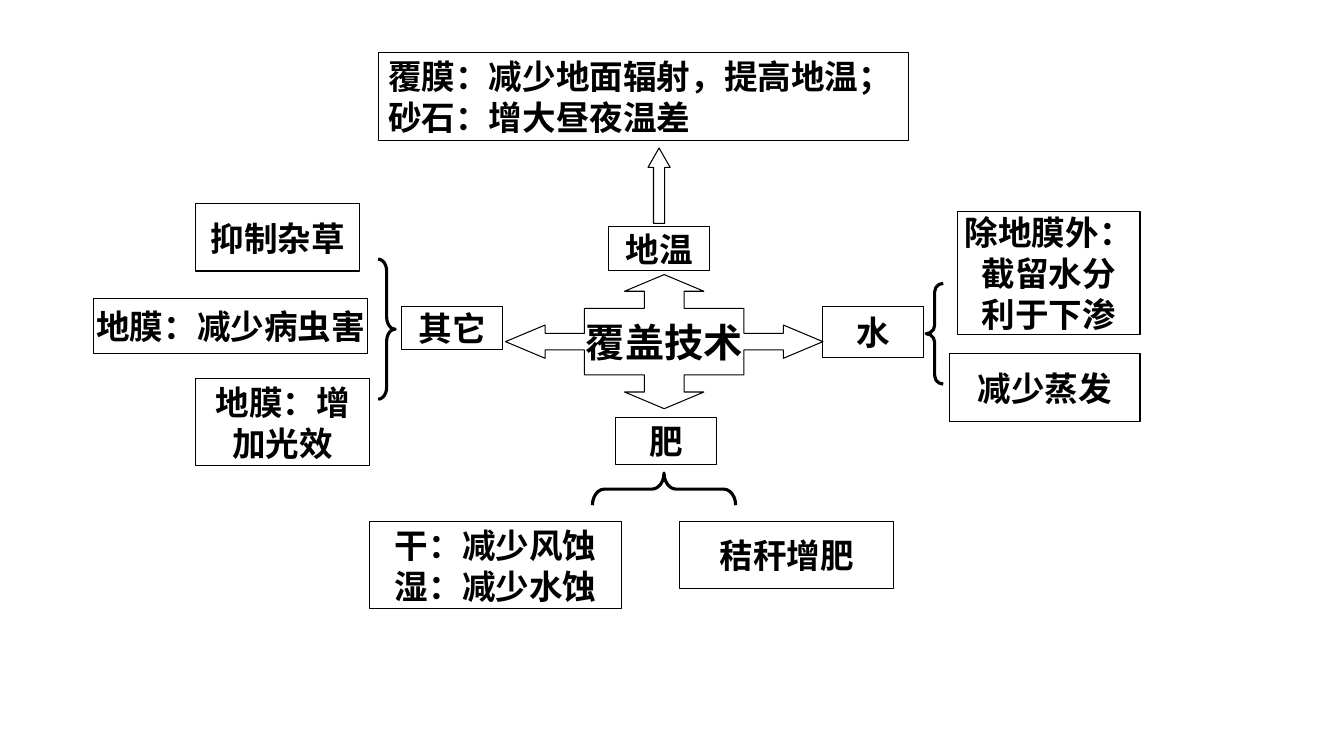
from lxml import etree
from pptx import Presentation
from pptx.dml.color import RGBColor
from pptx.enum.shapes import MSO_SHAPE
from pptx.enum.text import MSO_ANCHOR, PP_ALIGN
from pptx.oxml.ns import qn
from pptx.util import Cm, Pt

PROCESS = MSO_SHAPE.FLOWCHART_PROCESS
UP_ARROW = MSO_SHAPE.UP_ARROW
LEFT_BRACE, RIGHT_BRACE = MSO_SHAPE.LEFT_BRACE, MSO_SHAPE.RIGHT_BRACE
MIDDLE = MSO_ANCHOR.MIDDLE
LEFT, CENTER = PP_ALIGN.LEFT, PP_ALIGN.CENTER

FONT = "Noto Sans CJK SC"
BLACK, WHITE = "000000", "FFFFFF"
LINE_HEIGHT = 1.22

# Text, left, top, width, height (cm)
TOPICS = [
    ("地温", 15.34, 5.72, 2.54, 1.09),
    ("其它", 10.13, 7.72, 2.54, 1.09),
    ("肥", 15.52, 10.52, 2.54, 1.19),
    ("水", 20.73, 7.72, 2.54, 1.3),
]
EFFECTS = [
    ("除地膜外：\n截留水分\n利于下渗", 24.13, 5.33, 4.6, 3.1),
    ("减少蒸发", 23.93, 8.92, 4.8, 1.7),
    ("地膜：减少病虫害", 2.36, 7.52, 6.91, 1.4),
    ("抑制杂草", 4.93, 5.13, 4.14, 1.7),
    ("干：减少风蚀\n湿：减少水蚀", 9.32, 13.13, 6.35, 2.21),
    ("秸秆增肥", 17.12, 13.13, 5.41, 1.7),
    ("地膜：增\n加光效", 4.93, 9.53, 4.39, 2.21),
]
TEMPERATURE = ("覆膜：减少地面辐射，提高地温；\n砂石：增大昼夜温差", 9.53, 1.32, 13.36, 2.21)

# Kind, left, top, width, height (cm), curve, rotation
BRACES = [
    (LEFT_BRACE, 23.34, 7.14, 0.43, 2.54, 0.5, 0),
    (RIGHT_BRACE, 9.53, 6.53, 0.43, 3.53, 0.697, 0),
    (RIGHT_BRACE, 16.33, 10.52, 0.81, 3.61, 0.374, 270),
]

# Upper right quarter of the four-way arrow, from its centre (cm)
HUB_CENTER = (16.74, 8.61)
HUB_QUARTER = [(0, 1.69), (1, 1.27), (0.5, 1.27), (0.5, 0.84), (2.01, 0.84),
               (2.01, 0.21), (3, 0.21), (3, 0.42), (4, 0)]


def rgb(value):
    return RGBColor.from_string(value)


def style(sp, fill=WHITE, width=0.75):
    sp.shadow.inherit = False
    if fill:
        sp.fill.solid()
        sp.fill.fore_color.rgb = rgb(fill)
    else:
        sp.fill.background()
    sp.line.color.rgb = rgb(BLACK)
    sp.line.width = Pt(width)


def write(sp, text, size=24, align=CENTER):
    tf = sp.text_frame
    tf.word_wrap = False
    tf.vertical_anchor = MIDDLE
    font_format = {"name": FONT, "size": Pt(size), "bold": True}
    for i, line in enumerate(text.split("\n")):
        p = tf.add_paragraph() if i else tf.paragraphs[0]
        p.alignment = align
        p.line_spacing = Pt(size * LINE_HEIGHT)
        r = p.add_run()
        r.text = line
        for key, value in font_format.items():
            setattr(r.font, key, value)
        r.font.color.rgb = rgb(BLACK)
        # East Asian typeface
        etree.SubElement(r.font._element, qn("a:ea"), typeface=FONT)


def add_preset(s, kind, box, **look):
    sp = s.shapes.add_shape(kind, *(Cm(v) for v in box))
    style(sp, **look)
    return sp


def add_box(s, text, *box, align=CENTER):
    write(add_preset(s, PROCESS, box), text, align=align)


def add_brace(s, kind, left, top, width, height, curve, rotation):
    sp = add_preset(s, kind, (left, top, width, height), fill=None, width=2.25)
    sp.adjustments[0] = curve
    sp.rotation = rotation


def add_hub(s, text):
    # Mirror the quarter right to left, then top to bottom
    right = HUB_QUARTER + [(x, -y) for x, y in HUB_QUARTER[-2::-1]]
    outline = right + [(-x, y) for x, y in right[-2:0:-1]]
    cx, cy = HUB_CENTER
    points = [(Cm(cx + x), Cm(cy - y)) for x, y in outline]
    builder = s.shapes.build_freeform(*points[0])
    builder.add_line_segments(points[1:], close=True)
    sp = builder.convert_to_shape()
    style(sp)
    write(sp, text, size=28)


def main():
    prs = Presentation()
    prs.slide_width, prs.slide_height = Cm(33.87), Cm(19.05)
    s = prs.slides.add_slide(prs.slide_layouts[6])

    # Topics around the central arrow
    for topic in TOPICS:
        add_box(s, *topic)
    add_hub(s, "覆盖技术")

    # Effects of each topic
    for brace in BRACES:
        add_brace(s, *brace)
    for effect in EFFECTS:
        add_box(s, *effect)
    add_box(s, *TEMPERATURE, align=LEFT)

    # Arrow up to the temperature effects
    arrow = add_preset(s, UP_ARROW, (16.33, 3.73, 0.56, 1.9))
    arrow.adjustments[0] = 0.5
    arrow.adjustments[1] = 0.875

    prs.save("out.pptx")


if __name__ == "__main__":
    main()
